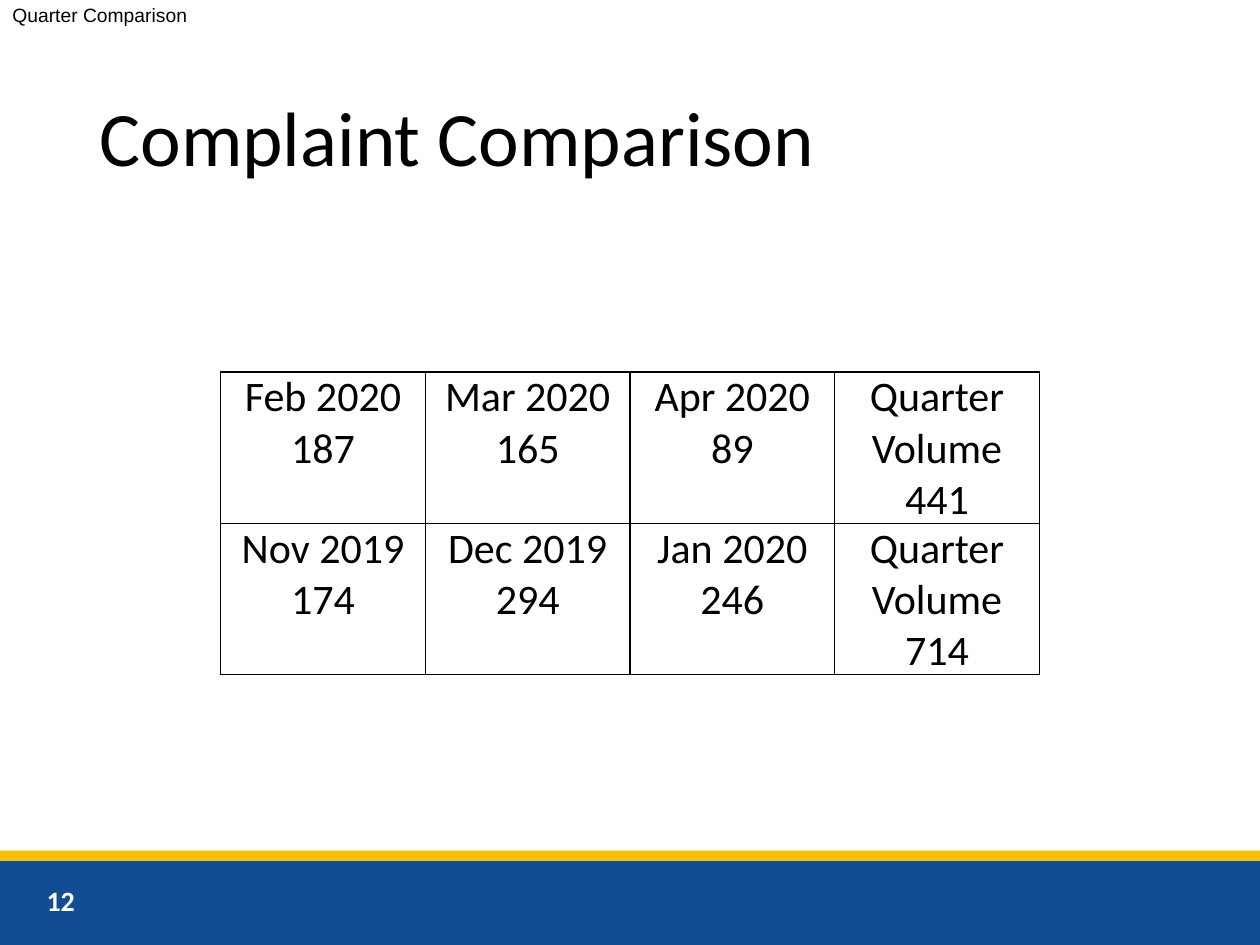
import pptx
import pptx.dml.color
import pptx.enum.shapes
import pptx.enum.text
import pptx.oxml
import pptx.oxml.ns
import pptx.util
from pptx.util import Cm

BLACK = pptx.dml.color.RGBColor(0x00, 0x00, 0x00)
WHITE = pptx.dml.color.RGBColor(0xFF, 0xFF, 0xFF)
BLUE = pptx.dml.color.RGBColor(0x12, 0x4C, 0x95)
GOLD = pptx.dml.color.RGBColor(0xFF, 0xC0, 0x00)

SLIDE_WIDTH, SLIDE_HEIGHT = Cm(25.4), Cm(19.05)
TITLE_ONLY_LAYOUT = 5

QUARTERS = [
    [("Feb 2020", 187), ("Mar 2020", 165), ("Apr 2020", 89), ("Quarter Volume", 441)],
    [("Nov 2019", 174), ("Dec 2019", 294), ("Jan 2020", 246), ("Quarter Volume", 714)],
]


def format_paragraph(paragraph, size, color=BLACK, name="Calibri", bold=False,
                     alignment=pptx.enum.text.PP_ALIGN.LEFT):
    paragraph.alignment = alignment
    paragraph.font.size = pptx.util.Pt(size)
    paragraph.font.name = name
    paragraph.font.bold = bold
    paragraph.font.color.rgb = color


def add_bar(slide, left, top, width, height, color):
    bar = slide.shapes.add_shape(pptx.enum.shapes.MSO_SHAPE.RECTANGLE, left, top, width, height)
    bar.shadow.inherit = False
    bar.fill.solid()
    bar.fill.fore_color.rgb = color
    bar.line.fill.background()


def add_label(slide, left, top, width, height, text, **font):
    label = slide.shapes.add_textbox(left, top, width, height)
    frame = label.text_frame
    frame.word_wrap = True
    frame.text = text
    format_paragraph(frame.paragraphs[0], **font)
    return frame


def add_footer(slide, left, top, width, height):
    stripe_height = Cm(0.2)
    add_bar(slide, left, top + stripe_height, width, height - stripe_height, BLUE)
    add_bar(slide, left, top, width, stripe_height, GOLD)
    add_label(slide, left + Cm(0.69), top + Cm(0.53), Cm(5.7), Cm(1.02),
              "12", size=16, color=WHITE, bold=True)


def place_title(slide, left, top, width, height):
    title = slide.shapes.title
    title.left, title.top, title.width, title.height = left, top, width, height
    frame = title.text_frame
    frame.text = "Complaint Comparison"
    frame.auto_size = pptx.enum.text.MSO_AUTO_SIZE.NONE
    frame.vertical_anchor = pptx.enum.text.MSO_ANCHOR.MIDDLE
    frame.paragraphs[0].line_spacing = 0.9
    format_paragraph(frame.paragraphs[0], 44)


def set_borders(cell):
    properties = cell._tc.get_or_add_tcPr()
    for position, side in enumerate(("lnL", "lnR", "lnT", "lnB")):
        # Border lines come before the cell fill
        properties.insert(position, pptx.oxml.parse_xml(
            f'<a:{side} {pptx.oxml.ns.nsdecls("a")} w="{pptx.util.Pt(1)}">'
            f'<a:solidFill><a:srgbClr val="{BLACK}"/></a:solidFill></a:{side}>'))


def fill_cell(cell, month, volume):
    cell.margin_left = cell.margin_right = Cm(0.18)
    cell.margin_top = cell.margin_bottom = 0
    cell.fill.background()
    cell.text = f"{month}\n{volume}"
    for paragraph in cell.text_frame.paragraphs:
        format_paragraph(paragraph, 24, alignment=pptx.enum.text.PP_ALIGN.CENTER)
    set_borders(cell)


def add_volume_table(slide, left, top, width, height):
    shape = slide.shapes.add_table(len(QUARTERS), len(QUARTERS[0]), left, top, width, height)
    table = shape.table
    table.first_row = table.horz_banding = False
    for row, quarter in zip(table.rows, QUARTERS):
        row.height = Cm(1.62)  # minimum height; rows grow with their text
        for cell, (month, volume) in zip(row.cells, quarter):
            fill_cell(cell, month, volume)
    shape.height = height


def add_section_label(slide, left, top, width, height):
    frame = add_label(slide, left, top, width, height, "Quarter Comparison",
                      size=11, name="Arial")
    frame.margin_top = Cm(0.06)


def main():
    presentation = pptx.Presentation()
    presentation.slide_width, presentation.slide_height = SLIDE_WIDTH, SLIDE_HEIGHT
    slide = presentation.slides.add_slide(presentation.slide_layouts[TITLE_ONLY_LAYOUT])

    # Footer band with page number
    footer_height = Cm(1.9)
    add_footer(slide, 0, SLIDE_HEIGHT - footer_height, SLIDE_WIDTH, footer_height)
    # Title, table and corner label
    place_title(slide, Cm(1.75), Cm(1.02), Cm(21.9), Cm(3.68))
    add_volume_table(slide, Cm(4.45), Cm(7.5), Cm(16.5), Cm(6.1))
    add_section_label(slide, 0, 0, SLIDE_WIDTH, Cm(1.27))

    presentation.save("out.pptx")


if __name__ == "__main__":
    main()
